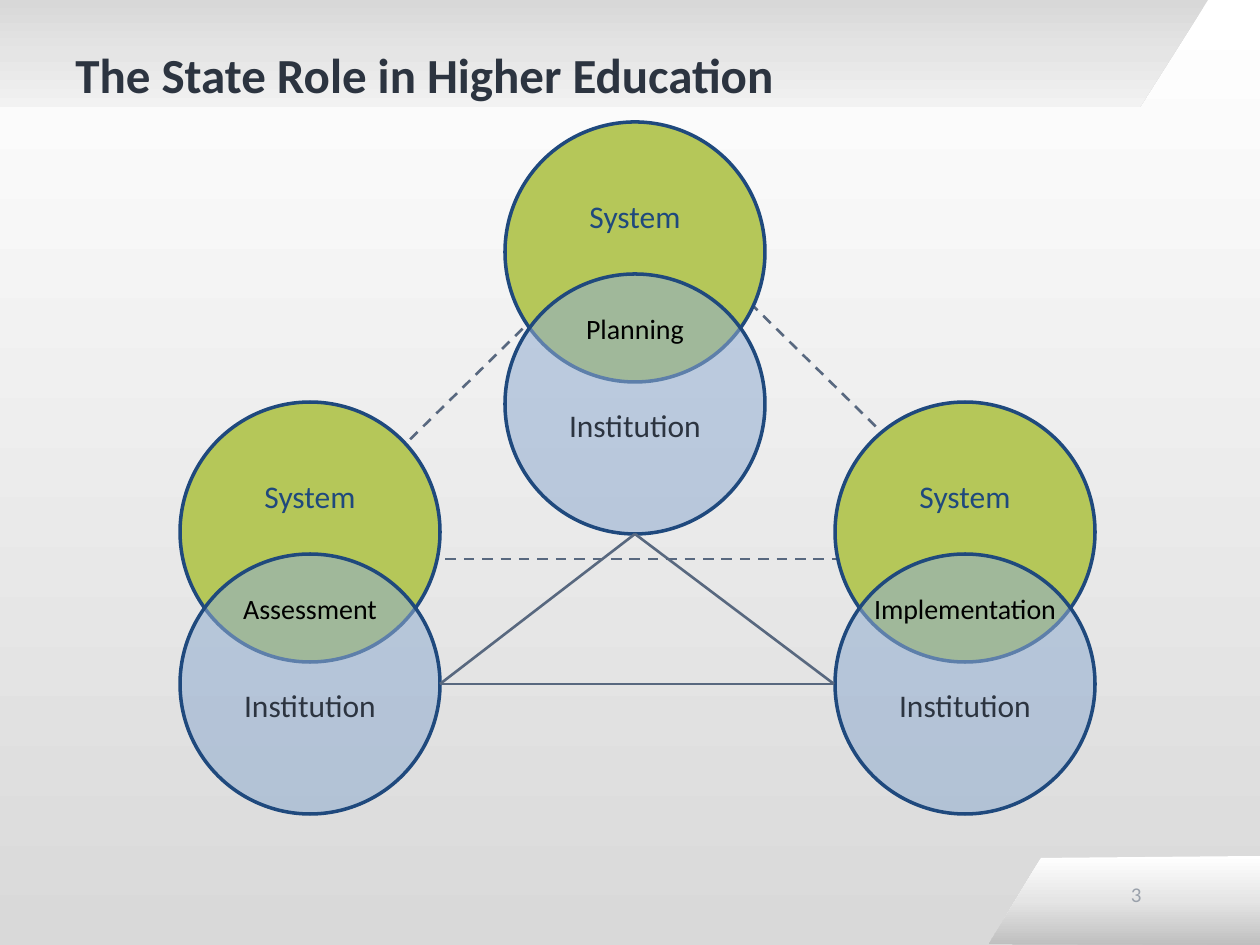
from pptx import Presentation
from pptx import util as u
from pptx.dml.color import RGBColor
from pptx.enum import dml, shapes, text
from pptx.oxml import ns
from pptx.oxml.xmlchemy import OxmlElement

EMU_PER_PX = 914400 / 126
FONT = "Calibri"
NAVY, SLATE, INK = "1F497D", "58687F", "2C3440"
GREEN, BLUE = "B5C759", "90ACD0"
DIAMETER = 260
INSET = 6
CENTER = text.PP_ALIGN.CENTER

# Left and top of the system circle, then the label of the overlap
PAIRS = [(835, 402, "Implementation"), (505, 122, "Planning"), (180, 402, "Assessment")]
INSTITUTION_DROP = 152
LABEL_DROP = 206

DASHED_LINES = [(427, 559, 871, 559), (737, 290, 916, 466), (562, 290, 383, 466)]
TRIANGLE = [(440, 684), (635, 534), (834, 684)]


def px(value):
    return u.Emu(round(value * EMU_PER_PX))


def color(hex_string):
    return RGBColor.from_string(hex_string)


def add_child(parent, tag, **attributes):
    child = OxmlElement(tag)
    for name, value in attributes.items():
        child.set(name, str(value))
    parent.append(child)
    return child


def set_gradient(fill, element, colors):
    """Fill from top to bottom with evenly spaced colours."""
    fill.gradient()
    fill.gradient_angle = 270
    stops = element.find(".//" + ns.qn("a:gsLst"))
    for stop in list(stops):
        stops.remove(stop)
    for index, value in enumerate(colors):
        stop = add_child(stops, "a:gs", pos=index * 100000 // (len(colors) - 1))
        add_child(stop, "a:srgbClr", val=value)


def add_panel(slide, points, colors):
    builder = slide.shapes.build_freeform(*points[0], scale=EMU_PER_PX)
    builder.add_line_segments(points[1:], close=True)
    shape = builder.convert_to_shape()
    shape.shadow.inherit = False
    shape.line.fill.background()
    set_gradient(shape.fill, shape.element, colors)


def write(shape, words, size, hex_string, align=CENTER, bold=False, wrap=False):
    frame = shape.text_frame
    frame.word_wrap = wrap
    frame.vertical_anchor = text.MSO_ANCHOR.MIDDLE
    paragraph = frame.paragraphs[0]
    paragraph.alignment = align
    run = paragraph.add_run()
    run.text = words
    run.font.name = FONT
    run.font.size = u.Pt(size)
    run.font.bold = bold
    run.font.color.rgb = color(hex_string)


def add_text(slide, box, words, size, hex_string, **style):
    shape = slide.shapes.add_textbox(*map(px, box))
    write(shape, words, size, hex_string, **style)


def add_circle(slide, left, top, fill, words, text_color, alpha=100, shift=0):
    """Draw a circle whose label sits shift px below its middle."""
    shape = slide.shapes.add_shape(
        shapes.MSO_SHAPE.OVAL, px(left), px(top), px(DIAMETER), px(DIAMETER))
    shape.shadow.inherit = False
    shape.fill.solid()
    shape.fill.fore_color.rgb = color(fill)
    if alpha < 100:
        fill_color = shape.element.spPr.find(".//" + ns.qn("a:srgbClr"))
        add_child(fill_color, "a:alpha", val=alpha * 1000)
    shape.line.color.rgb = color(NAVY)
    shape.line.width = u.Pt(2)
    frame = shape.text_frame
    frame.margin_left = frame.margin_right = 0
    frame.margin_top = px(INSET + max(0, 2 * shift))
    frame.margin_bottom = px(INSET + max(0, -2 * shift))
    write(shape, words, 18, text_color)


def add_line(slide, ends, dashed=False):
    line = slide.shapes.add_connector(shapes.MSO_CONNECTOR.STRAIGHT, *map(px, ends))
    line.line.color.rgb = color(SLATE)
    line.line.width = u.Pt(1.5)
    if dashed:
        line.line.dash_style = dml.MSO_LINE.DASH
    add_child(line.element.spPr, "a:effectLst")


def main():
    presentation = Presentation()
    presentation.slide_width = px(1260)
    presentation.slide_height = px(945)
    slide = presentation.slides.add_slide(presentation.slide_layouts[6])
    set_gradient(slide.background.fill, slide.element, ["FFFFFF", "D9D9D9"])

    add_panel(slide, [(0, 0), (1208, 0), (1140, 107), (0, 107)],
              ["D8D8D8", "E5E5E5", "F2F2F2"])
    add_panel(slide, [(1260, 856), (1041, 858), (989, 944), (1260, 945)],
              ["FFFFFF", "E5E5E5", "BFBFBF"])
    add_text(slide, (63, 38, 976, 71), "The State Role in Higher Education", 28, INK,
             align=text.PP_ALIGN.LEFT, bold=True, wrap=True)

    for ends in DASHED_LINES:
        add_line(slide, ends, dashed=True)
    for left, top, _ in PAIRS:
        add_circle(slide, left, top, GREEN, "System", NAVY, shift=-36)
    for left, top, _ in PAIRS:
        add_circle(slide, left, top + INSTITUTION_DROP, BLUE, "Institution", INK,
                   alpha=55, shift=21)
    for left, top, label in PAIRS:
        add_text(slide, (left + 25, top + LABEL_DROP - 23, 210, 46), label, 16, "000000")
    for index, start in enumerate(TRIANGLE):
        add_line(slide, start + TRIANGLE[(index + 1) % len(TRIANGLE)])

    add_text(slide, (1070, 869, 84, 50), "3", 12, "9AA1AB",
             align=text.PP_ALIGN.RIGHT, wrap=True)
    presentation.save("out.pptx")


if __name__ == "__main__":
    main()
